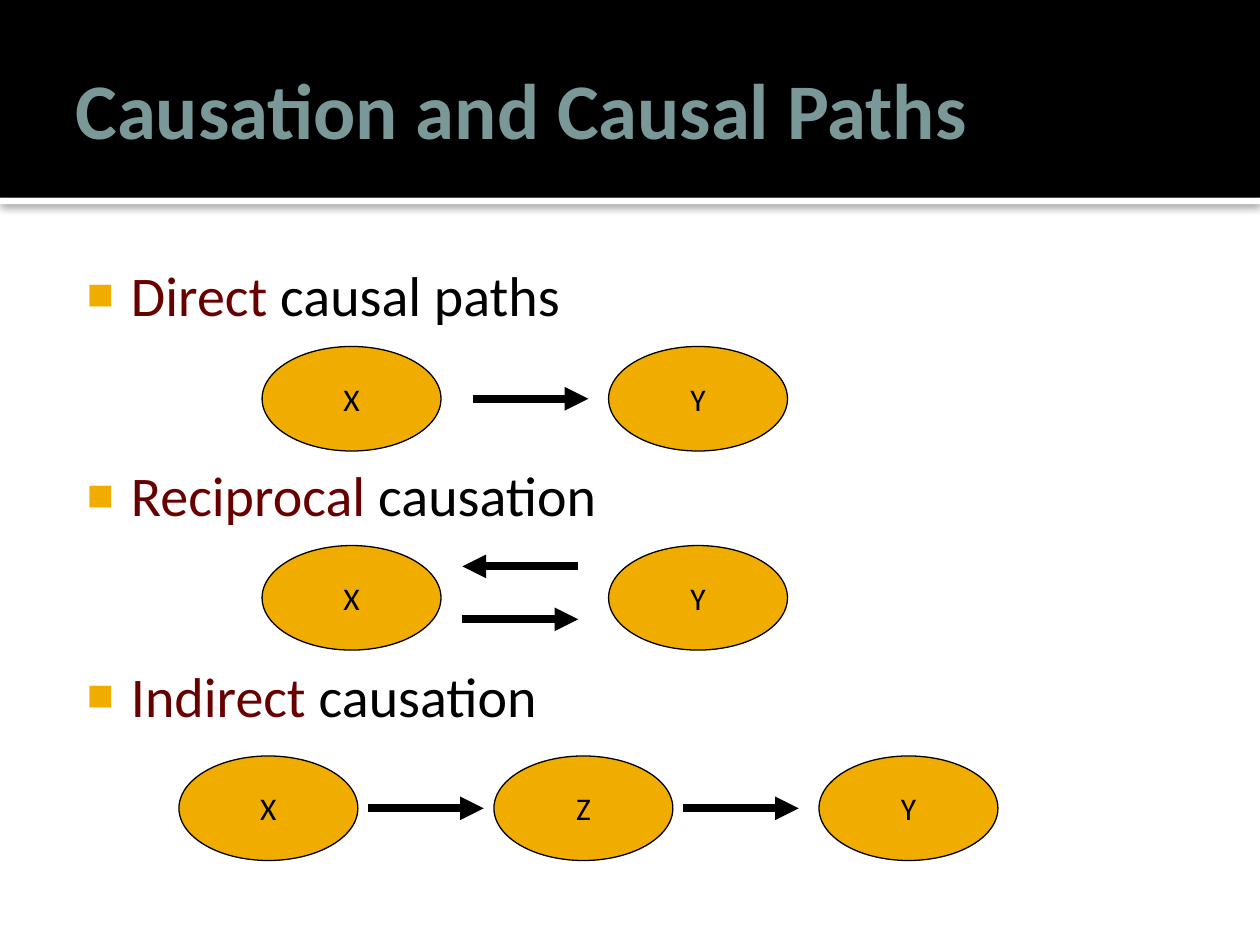
from lxml import etree
from pptx import Presentation
from pptx.dml.color import RGBColor
from pptx.enum.shapes import MSO_CONNECTOR, MSO_SHAPE
from pptx.enum.text import MSO_ANCHOR, PP_ALIGN
from pptx.oxml.ns import qn
from pptx.util import Inches, Pt

RECT, OVAL = MSO_SHAPE.RECTANGLE, MSO_SHAPE.OVAL
STRAIGHT = MSO_CONNECTOR.STRAIGHT
MIDDLE, CENTER = MSO_ANCHOR.MIDDLE, PP_ALIGN.CENTER

FONT = "Calibri"
BLACK, WHITE, GOLD, MAROON, TEAL = "000000", "FFFFFF", "F0AD00", "680000", "7B9899"
NODE_W, NODE_H, ARROW_W = 1.42, 0.83, 0.92


def rgb(value):
    return RGBColor.from_string(value)


def sub(parent, tag, **attrs):
    return etree.SubElement(parent, qn(tag), {k: str(v) for k, v in attrs.items()})


def add_run(p, text, size=18, color=BLACK, bold=False):
    r = p.add_run()
    r.text = text
    r.font.name, r.font.size, r.font.bold = FONT, Pt(size), bold
    r.font.color.rgb = rgb(color)


def add_shape(shapes, kind, x, y, w, h, fill, line=None):
    sp = shapes.add_shape(kind, Inches(x), Inches(y), Inches(w), Inches(h))
    sp.shadow.inherit = False
    sp.fill.solid()
    sp.fill.fore_color.rgb = rgb(fill)
    if line:
        sp.line.color.rgb = rgb(line)
        sp.line.width = Pt(0.75)
    else:
        sp.line.fill.background()
    return sp


def add_text_frame(s, x, y, w, h, insets):
    tf = s.shapes.add_textbox(Inches(x), Inches(y), Inches(w), Inches(h)).text_frame
    tf.word_wrap = True
    tf.margin_left, tf.margin_top, tf.margin_right, tf.margin_bottom = map(Inches, insets)
    return tf


def add_node(shapes, x, y, label):
    sp = add_shape(shapes, OVAL, x, y, NODE_W, NODE_H, GOLD, BLACK)
    tf = sp.text_frame
    tf.word_wrap = False
    tf.vertical_anchor = MIDDLE
    tf.paragraphs[0].alignment = CENTER
    add_run(tf.paragraphs[0], label)


def add_arrow(shapes, x, y, end="a:tailEnd"):
    cx = shapes.add_connector(STRAIGHT, Inches(x), Inches(y), Inches(x + ARROW_W), Inches(y))
    cx.line.color.rgb = rgb(BLACK)
    cx.line.width = Pt(4.5)
    sub(cx.line._get_or_add_ln(), end, type="triangle")
    sub(cx._element.spPr, "a:effectLst")


def add_header(s, w, h):
    # White strip with a soft shadow below the black band
    strip = add_shape(s.shapes, RECT, 0, h, w, 0.05, WHITE)
    effects = strip._element.spPr.find(qn("a:effectLst"))
    shadow = sub(effects, "a:outerShdw", blurRad=Pt(5), dist=Pt(0.8), dir=90 * 60000,
                 algn="t", rotWithShape=0)
    sub(sub(shadow, "a:srgbClr", val=BLACK), "a:alpha", val=60000)
    add_shape(s.shapes, RECT, 0, 0, w, h, BLACK)

    # Title
    tf = add_text_frame(s, 0.5, 0.17, w - 1, 1.37, (0.1, 0.05, 0.05, 0.05))
    tf.vertical_anchor = MIDDLE
    add_run(tf.paragraphs[0], "Causation and Causal Paths", size=45, color=TEAL, bold=True)


def add_bullets(s, x, y, w, h, items):
    tf = add_text_frame(s, x, y, w, h, (0.06, 0.13, 0.1, 0.05))
    for i, (key, rest) in enumerate(items):
        p = tf.paragraphs[0] if i == 0 else tf.add_paragraph()
        p.space_before = Pt(76 if i else 0)  # room for the diagram above
        pPr = p._p.get_or_add_pPr()
        pPr.set("marL", str(Inches(0.48)))
        pPr.set("indent", str(Inches(-0.35)))
        sub(sub(pPr, "a:buClr"), "a:srgbClr", val=GOLD)
        sub(pPr, "a:buSzPct", val=80000)
        sub(pPr, "a:buFont", typeface="Arial")
        sub(pPr, "a:buChar", char="■")
        add_run(p, key, size=32, color=MAROON)
        add_run(p, rest, size=32)


def add_diagram(s, y, nodes, arrows):
    """Nodes are (x, label); arrows are (x, offset from the middle, arrowhead end)."""
    shapes = s.shapes.add_group_shape().shapes
    for x, label in nodes:
        add_node(shapes, x, y, label)
    for x, dy, end in arrows:
        add_arrow(shapes, x, y + NODE_H / 2 + dy, end)


def main():
    prs = Presentation()
    prs.slide_width, prs.slide_height = Inches(10), Inches(7.5)
    s = prs.slides.add_slide(prs.slide_layouts[6])

    add_header(s, 10, 1.57)
    add_bullets(s, 0.5, 1.94, 9, 5.06, [
        ("Direct", " causal paths"),
        ("Reciprocal", " causation"),
        ("Indirect", " causation"),
    ])

    # Causal diagrams, one under each bullet
    right, left = "a:tailEnd", "a:headEnd"
    pair = [(2.08, "X"), (4.83, "Y")]
    add_diagram(s, 2.75, pair, [(3.75, 0, right)])
    add_diagram(s, 4.33, pair, [(3.67, 0.17, right), (3.67, -0.25, left)])
    add_diagram(s, 6, [(1.42, "X"), (3.92, "Z"), (6.5, "Y")],
                [(2.92, 0, right), (5.42, 0, right)])

    prs.save("out.pptx")


if __name__ == "__main__":
    main()
